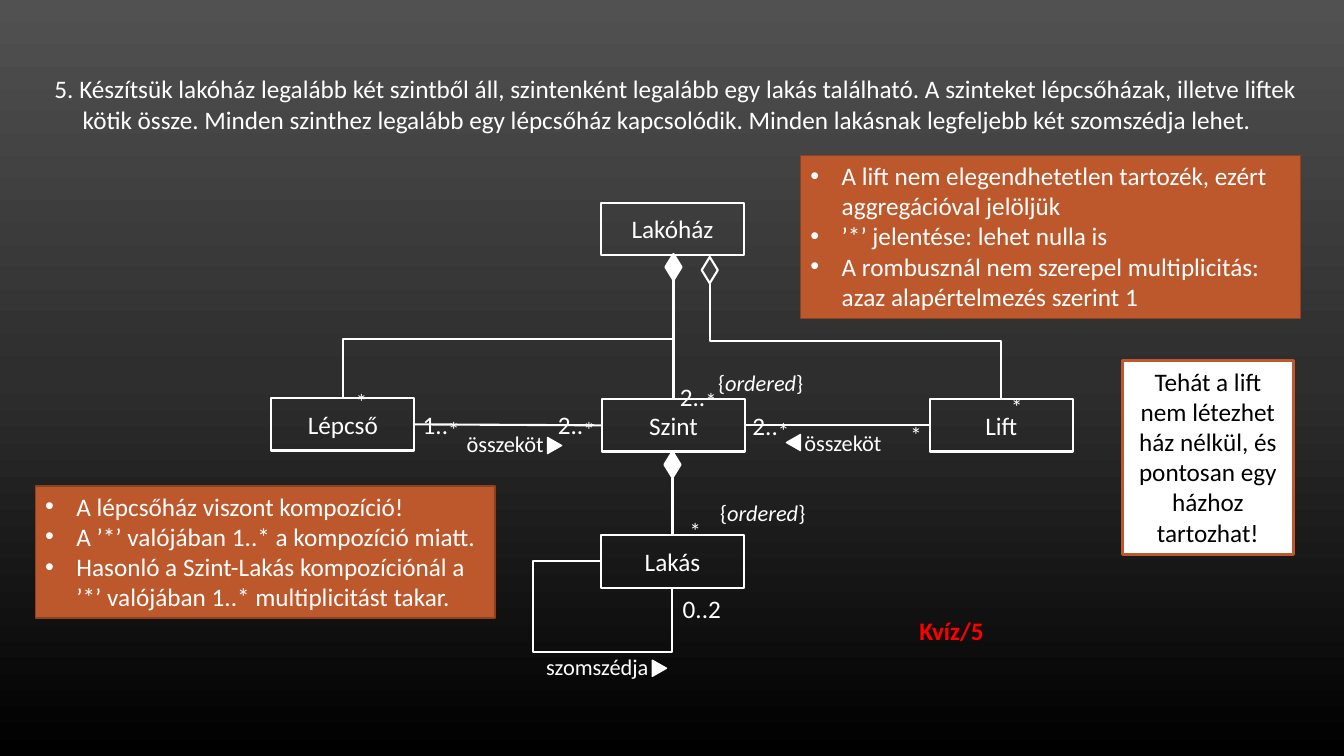
import copy
import pptx
import pptx.util
import pptx.dml.color
import pptx.enum.shapes
import pptx.enum.text
import pptx.oxml.ns

FONT = "Calibri"
WHITE, BLACK, RED = "FFFFFF", "000000", "FF0000"
RUST, DARK_RUST, GREY = "BD582C", "8C4121", "404040"
BACKDROP = [(0, "515151"), (0.5, "2E2E2E"), (1, BLACK)]

TASK = [
    "5. Készítsük lakóház legalább két szintből áll, szintenként legalább egy lakás található. "
    "A szinteket lépcsőházak, illetve liftek",
    "kötik össze. Minden szinthez legalább egy lépcsőház kapcsolódik. "
    "Minden lakásnak legfeljebb két szomszédja lehet.",
]
CLASS_SIZE = (1.42, 0.52)
CLASSES = {
    "Lakóház": (5.96, 2.01),
    "Lépcső": (2.69, 3.95),
    "Szint": (5.97, 3.96),
    "Lift": (9.22, 3.96),
    "Lakás": (5.96, 5.31),
}
DIAMOND_SIZE = (0.16, 0.26)
DIAMONDS = {
    "house parts": (6.6, 2.52, WHITE),
    "house lift": (6.96, 2.55, GREY),
    "level flats": (6.59, 4.48, WHITE),
}
TOP, LEFT, BOTTOM, RIGHT = range(4)
STRAIGHT_LINKS = [
    ("Szint", TOP, "house parts", BOTTOM),
    ("Lakás", TOP, "level flats", BOTTOM),
    ("Lépcső", RIGHT, "Szint", LEFT),
    ("Szint", RIGHT, "Lift", LEFT),
]
RISING_LINKS = [("Lépcső", "house parts"), ("Lift", "house lift")]
LOOP_ADJUST = {"adj1": -95200, "adj2": 347200}
ARROW_SIZE = (0.16, 0.14)
ARROWS = [(5.42, 4.35, 90), (7.79, 4.32, 270), (6.46, 6.56, 90)]

STAR = ("*", 28, "star")
ORDERED = [("{", 16, ""), ("ordered", 16, "italic"), ("}", 16, "")]
CONNECTS = [("összeköt", 16, "")]
TWO_UP = [("2..", 18, ""), STAR]
LABELS = [
    (4.52, 4.22, 0.98, 0.37, CONNECTS),
    (7.87, 4.21, 0.98, 0.37, CONNECTS),
    (7.01, 3.61, 1.07, 0.37, ORDERED),
    (7.03, 4.9, 1.07, 0.37, ORDERED),
    (5.31, 6.43, 1.23, 0.37, [("szomszédja", 16, "")]),
    (6.67, 5.84, 0.58, 0.4, [("0..2", 18, "")]),
    (4.08, 3.87, 0.59, 0.42, [("1..", 18, ""), STAR]),
    (5.42, 3.87, 0.59, 0.42, TWO_UP),
    (7.35, 3.88, 0.59, 0.42, TWO_UP),
    (6.63, 3.59, 0.59, 0.42, TWO_UP),
    (3.42, 3.6, 0.33, 0.42, [STAR]),
    (6.73, 4.88, 0.33, 0.42, [STAR]),
    (8.92, 3.92, 0.33, 0.42, [STAR]),
    (9.92, 3.64, 0.33, 0.42, [STAR]),
]
NOTES = [
    ((7.94, 1.54, 4.96, 1.62), [
        "A lift nem elegendhetetlen tartozék, ezért aggregációval jelöljük",
        "’*’ jelentése: lehet nulla is",
        "A rombusznál nem szerepel multiplicitás: azaz alapértelmezés szerint 1",
    ]),
    ((0.35, 4.82, 4.56, 1.31), [
        "A lépcsőház viszont kompozíció!",
        "A ’*’ valójában 1..* a kompozíció miatt.",
        "Hasonló a Szint-Lakás kompozíciónál a ’*’ valójában 1..* multiplicitást takar.",
    ]),
]
REMARK = "Tehát a lift nem létezhet ház nélkül, és pontosan egy házhoz tartozhat!"

MSO = pptx.enum.shapes.MSO_SHAPE
LINK = pptx.enum.shapes.MSO_CONNECTOR
ALIGN = pptx.enum.text.PP_ALIGN
ANCHOR = pptx.enum.text.MSO_ANCHOR
inch = pptx.util.Inches


def rgb(value):
    return pptx.dml.color.RGBColor.from_string(value)


def font(r, size=18, color=WHITE, bold=False):
    r.font.name, r.font.size, r.font.bold = FONT, pptx.util.Pt(size), bold
    r.font.color.rgb = rgb(color)


def write(sp, lines, color=WHITE, align=ALIGN.LEFT, anchor=ANCHOR.TOP, wrap=True, bold=False):
    tf = sp.text_frame
    tf.text = "\n".join(lines)
    tf.word_wrap, tf.vertical_anchor = wrap, anchor
    tf.auto_size = pptx.enum.text.MSO_AUTO_SIZE.NONE
    for p in tf.paragraphs:
        p.alignment = align
        for r in p.runs:
            font(r, color=color, bold=bold)


def indent(p, left, first=0):
    pPr = p._p.get_or_add_pPr()
    pPr.set("marL", str(inch(left)))
    pPr.set("indent", str(inch(first)))
    return pPr


def shape(kind, box, fill, line, width):
    sp = s.shapes.add_shape(kind, *map(inch, box))
    sp.shadow.inherit = False
    if fill:
        sp.fill.solid()
        sp.fill.fore_color.rgb = rgb(fill)
    else:
        sp.fill.background()
    sp.line.color.rgb = rgb(line)
    sp.line.width = pptx.util.Pt(width)
    return sp


def link(kind, start, start_site, end, end_site):
    c = s.shapes.add_connector(kind, 0, 0, 0, 0)
    c.begin_connect(nodes[start], start_site)
    c.end_connect(nodes[end], end_site)
    c.line.color.rgb = rgb(WHITE)
    c.line.width = pptx.util.Pt(1.5)
    c.element.spPr.append(pptx.oxml.parse_xml(f"<a:effectLst {pptx.oxml.ns.nsdecls('a')}/>"))
    return c


prs = pptx.Presentation()
prs.slide_width, prs.slide_height = inch(13.33), inch(7.5)
s = prs.slides.add_slide(prs.slide_layouts[5])

fill = s.background.fill
fill.gradient()
fill.gradient_angle = 270
stops = s.element.xpath(".//a:gsLst")[0]
stops.append(copy.deepcopy(stops[0]))
for stop, (position, color) in zip(fill.gradient_stops, BACKDROP):
    stop.position, stop.color.rgb = position, rgb(color)

title = s.shapes.title
title.left, title.top, title.width, title.height = map(inch, (0.44, 0.68, 12.79, 0.71))
write(title, TASK, wrap=False)
indent(title.text_frame.paragraphs[1], 0.28)

nodes = {}
for name, place in CLASSES.items():
    nodes[name] = shape(MSO.RECTANGLE, place + CLASS_SIZE, None, WHITE, 1.5)
    write(nodes[name], [name], align=ALIGN.CENTER, anchor=ANCHOR.MIDDLE)
for name, (x, y, color) in DIAMONDS.items():
    nodes[name] = shape(MSO.DIAMOND, (x, y) + DIAMOND_SIZE, color, WHITE, 1.5)

for ends in STRAIGHT_LINKS:
    link(LINK.STRAIGHT, *ends)
for start, end in RISING_LINKS:
    c = link(LINK.ELBOW, start, TOP, end, BOTTOM)
    x1, y1, x2, y2 = c.begin_x, c.begin_y, c.end_x, c.end_y
    across, rise = abs(x2 - x1), abs(y2 - y1)
    c.left, c.top = (x1 + x2 - rise) // 2, (y1 + y2 - across) // 2
    c.width, c.height = rise, across
    xfrm = c.element.spPr.xfrm
    xfrm.set("rot", str(270 * 60000))
    xfrm.set("flipH", "0")
    xfrm.set("flipV", "1" if x1 > x2 else "0")

loop = link(LINK.ELBOW, "Lakás", LEFT, "Lakás", BOTTOM)
geometry = loop.element.spPr.prstGeom
geometry.set("prst", "bentConnector4")
guides = "".join(f'<a:gd name="{k}" fmla="val {v}"/>' for k, v in LOOP_ADJUST.items())
for old in list(geometry):
    geometry.remove(old)
geometry.append(pptx.oxml.parse_xml(f"<a:avLst {pptx.oxml.ns.nsdecls('a')}>{guides}</a:avLst>"))

for x, y, turn in ARROWS:
    shape(MSO.ISOSCELES_TRIANGLE, (x, y) + ARROW_SIZE, WHITE, WHITE, 1).rotation = turn

for *box, runs in LABELS:
    tf = s.shapes.add_textbox(*map(inch, box)).text_frame
    tf.word_wrap = False
    p = tf.paragraphs[0]
    p.alignment = ALIGN.CENTER
    for text, size, style in runs:
        r = p.add_run()
        r.text = text
        font(r, size)
        r.font.italic = style == "italic"
        if style == "star":
            r._r.get_or_add_rPr().set("baseline", "-10000")

for box, lines in NOTES:
    sp = shape(MSO.RECTANGLE, box, RUST, DARK_RUST, 1)
    write(sp, lines)
    for p in sp.text_frame.paragraphs:
        pPr = indent(p, 0.31, -0.31)
        for tag in (f'buFont {pptx.oxml.ns.nsdecls("a")} typeface="Arial"',
                    f'buChar {pptx.oxml.ns.nsdecls("a")} char="•"'):
            pPr.append(pptx.oxml.parse_xml(f"<a:{tag}/>"))

write(shape(MSO.RECTANGLE, (11.13, 3.58, 1.7, 1.92), WHITE, RUST, 2.25), [REMARK], BLACK, ALIGN.CENTER)
write(s.shapes.add_textbox(*map(inch, (9.02, 6.06, 0.99, 0.4))), ["Kvíz/5"], RED, bold=True)

prs.save("out.pptx")
